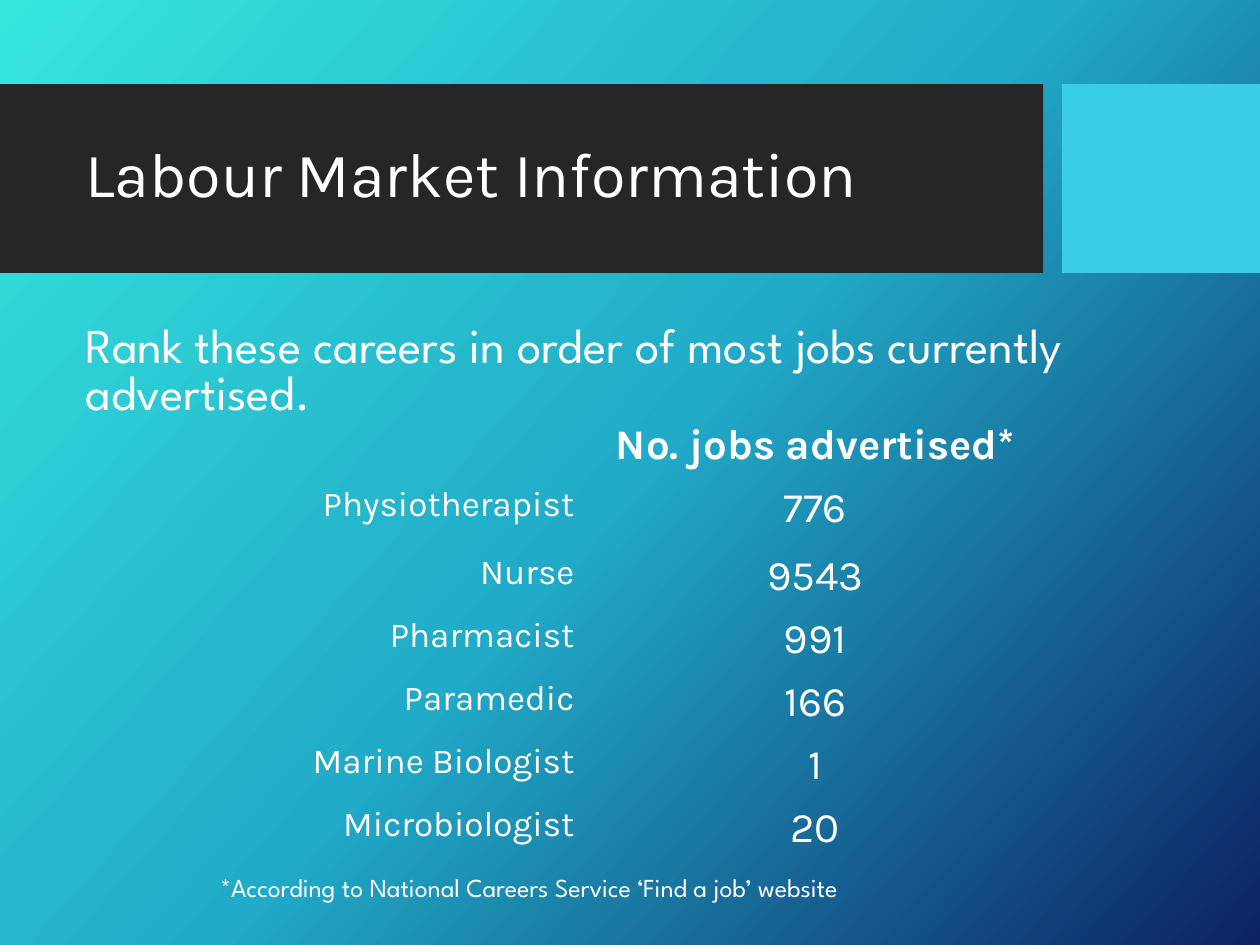
from copy import deepcopy
from dataclasses import dataclass

from pptx import Presentation
from pptx.dml.color import RGBColor
from pptx.enum.shapes import MSO_SHAPE
from pptx.enum.text import MSO_ANCHOR, PP_ALIGN
from pptx.util import Inches, Pt

RECTANGLE = MSO_SHAPE.RECTANGLE
TOP, MIDDLE = MSO_ANCHOR.TOP, MSO_ANCHOR.MIDDLE
LEFT, CENTER, RIGHT = PP_ALIGN.LEFT, PP_ALIGN.CENTER, PP_ALIGN.RIGHT

WIDTH, HEIGHT = 10, 7.5
HEADING_FONT, BODY_FONT = "Karla", "League Spartan"
COLORS = {
    "white": "FFFFFF",
    "band": "262626",
    "accent": "39CDE7",
    "gradient_start": "36E6DD",
    "gradient_middle": "21ABC8",
    "gradient_end": "0C2263",
}
GRADIENT = ("gradient_start", "gradient_middle", "gradient_end")
GRADIENT_ANGLE = 42
PLAIN_TABLE_STYLE = "{2D5ABB26-0587-4C30-8999-92F81FD0307C}"
COLUMN_WIDTHS = (3.67, 3.62)
ROW_HEIGHT, FIRST_CAREER_HEIGHT = 0.41, 0.54


@dataclass(frozen=True)
class Box:
    left: float
    top: float
    width: float
    height: float

    def lengths(self) -> tuple:
        return tuple(
            Inches(share * size)
            for share, size in (
                (self.left, WIDTH),
                (self.top, HEIGHT),
                (self.width, WIDTH),
                (self.height, HEIGHT),
            )
        )


@dataclass(frozen=True)
class Band:
    box: Box
    color: str


@dataclass(frozen=True)
class Career:
    name: str
    jobs: str


BANDS = (
    Band(Box(0, 0.089, 0.828, 0.2), "band"),
    Band(Box(0.843, 0.089, 0.157, 0.2), "accent"),
)
CAREERS = (
    Career("Physiotherapist", "776"),
    Career("Nurse", "9543"),
    Career("Pharmacist", "991"),
    Career("Paramedic", "166"),
    Career("Marine Biologist", "1"),
    Career("Microbiologist", "20"),
)


def rgb(name: str) -> RGBColor:
    return RGBColor.from_string(COLORS[name])


def write(text_frame, text: str, *, size: float, font: str = HEADING_FONT,
          bold: bool = False, align=LEFT, spacing: float = 1.0) -> None:
    paragraph = text_frame.paragraphs[0]
    paragraph.alignment = align
    paragraph.line_spacing = spacing
    run = paragraph.add_run()
    run.text = text
    run.font.size = Pt(size)
    run.font.name = font
    run.font.bold = bold
    run.font.color.rgb = rgb("white")


def add_text(slide, box: Box, text: str, *, anchor=TOP, **text_format) -> None:
    text_frame = slide.shapes.add_textbox(*box.lengths()).text_frame
    text_frame.word_wrap = True
    text_frame.vertical_anchor = anchor
    write(text_frame, text, **text_format)


def add_band(slide, band: Band) -> None:
    shape = slide.shapes.add_shape(RECTANGLE, *band.box.lengths())
    shape.shadow.inherit = False
    shape.fill.solid()
    shape.fill.fore_color.rgb = rgb(band.color)
    shape.line.fill.background()


def paint_background(slide) -> None:
    fill = slide.background.fill
    fill.gradient()
    fill.gradient_angle = 360 - GRADIENT_ANGLE
    stop_list = fill._fill._gradFill.gsLst
    stop_list.insert(1, deepcopy(stop_list[0]))
    for index, (stop, color) in enumerate(zip(fill.gradient_stops, GRADIENT)):
        stop.position = index / (len(GRADIENT) - 1)
        stop.color.rgb = rgb(color)


def add_career_table(slide, box: Box) -> None:
    frame = slide.shapes.add_table(
        len(CAREERS) + 1, len(COLUMN_WIDTHS), *box.lengths()
    )
    table = frame.table
    table.first_row = False
    table.horz_banding = False
    table._tbl.tblPr[0].text = PLAIN_TABLE_STYLE
    for column, width in zip(table.columns, COLUMN_WIDTHS):
        column.width = Inches(width)
    for index, row in enumerate(table.rows):
        row.height = Inches(FIRST_CAREER_HEIGHT if index == 1 else ROW_HEIGHT)
    for cell in table.iter_cells():
        cell.fill.background()
    write(table.cell(0, 1).text_frame, "No. jobs advertised*",
          size=24, bold=True, align=CENTER)
    for index, career in enumerate(CAREERS, start=1):
        write(table.cell(index, 0).text_frame, career.name, size=20, align=RIGHT)
        write(table.cell(index, 1).text_frame, career.jobs, size=24, align=CENTER)


def main() -> None:
    presentation = Presentation()
    presentation.slide_width = Inches(WIDTH)
    presentation.slide_height = Inches(HEIGHT)
    slide = presentation.slides.add_slide(presentation.slide_layouts[6])
    paint_background(slide)
    for band in BANDS:
        add_band(slide, band)
    add_text(slide, Box(0.058, 0.109, 0.754, 0.157), "Labour Market Information",
             size=36, anchor=MIDDLE, spacing=0.9)
    add_text(slide, Box(0.058, 0.339, 0.858, 0.11),
             "Rank these careers in order of most jobs currently advertised.",
             size=27.8, font=BODY_FONT, spacing=0.8)
    add_career_table(slide, Box(0.099, 0.439, 0.729, 0.4))
    add_text(slide, Box(0.165, 0.912, 0.75, 0.053),
             "*According to National Careers Service ‘Find a job’ website",
             size=14.8, font=BODY_FONT, anchor=MIDDLE)
    presentation.save("out.pptx")


if __name__ == "__main__":
    main()
